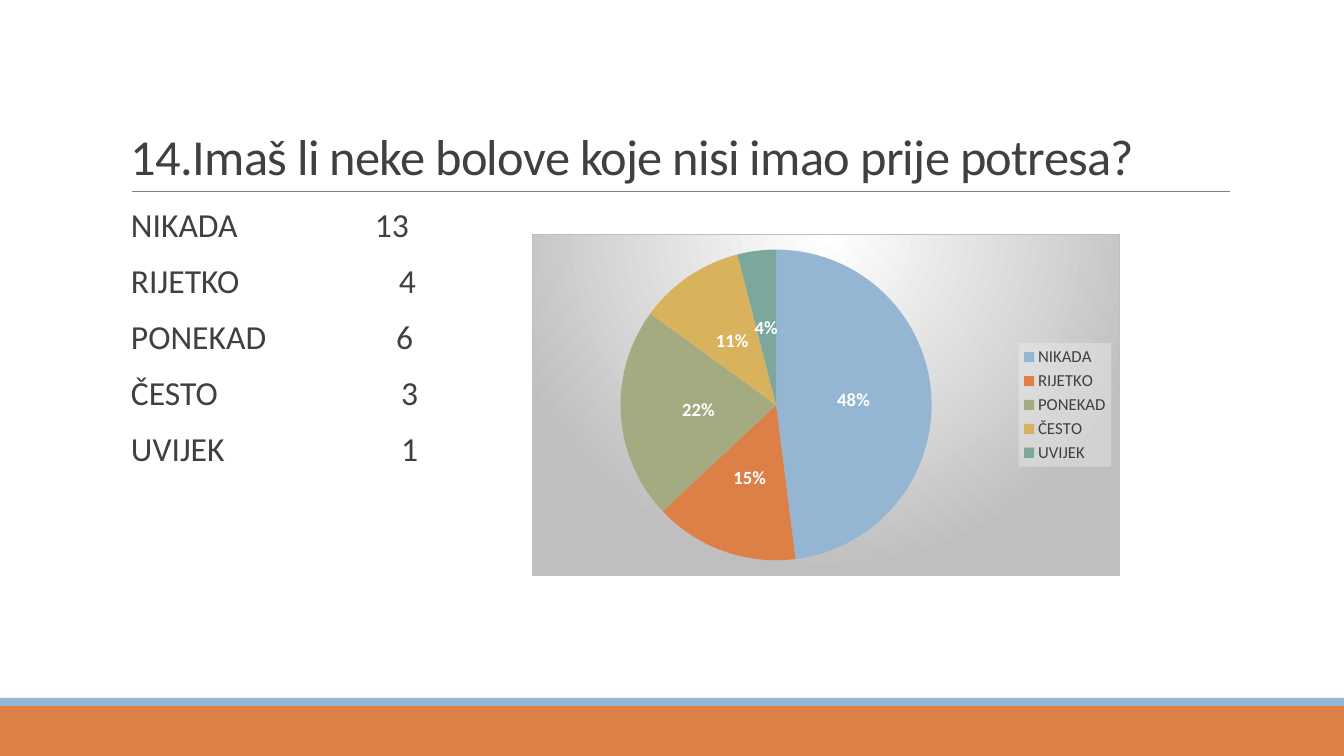
import pptx
import pptx.chart.data
import pptx.dml.color
import pptx.enum.chart
import pptx.enum.shapes
import pptx.enum.text
import pptx.oxml
import pptx.oxml.ns
import pptx.util

PX = 914400 / 100.8
FONT = "Calibri"
DARK = "404040"
BLUE = "94B6D2"
ORANGE = "DD8047"
GREY = "BFBFBF"
NAMESPACES = pptx.oxml.ns.nsdecls("a", "c")
qn = pptx.oxml.ns.qn

ANSWERS = [
    ("NIKADA", 13, 244, 48, BLUE),
    ("RIJETKO", 4, 268, 15, ORANGE),
    ("PONEKAD", 6, 265, 22, "A5AB81"),
    ("ČESTO", 3, 270, 11, "D8B25C"),
    ("UVIJEK", 1, 270, 4, "7BA79D"),
]


def px(*lengths):
    return [round(length * PX) for length in lengths]


def rgb(value):
    return pptx.dml.color.RGBColor.from_string(value)


def style_font(font, size, color, bold=False):
    font.name = FONT
    font.size = pptx.util.Pt(size)
    font.bold = bold
    font.color.rgb = rgb(color)


def add_band(slide, top, height, color):
    band = slide.shapes.add_shape(
        pptx.enum.shapes.MSO_SHAPE.RECTANGLE, *px(0, top, 1344, height))
    band.shadow.inherit = False
    band.fill.solid()
    band.fill.fore_color.rgb = rgb(color)
    band.line.fill.background()


def add_rule(slide, left, right, y):
    rule = slide.shapes.add_connector(
        pptx.enum.shapes.MSO_CONNECTOR.STRAIGHT, *px(left, y, right, y))
    rule.line.color.rgb = rgb("808080")
    rule.line.width = pptx.util.Pt(0.5)
    rule._element.spPr.append(pptx.oxml.parse_xml(f"<a:effectLst {NAMESPACES}/>"))


def add_text_frame(slide, left, top, width, height):
    frame = slide.shapes.add_textbox(*px(left, top, width, height)).text_frame
    frame.word_wrap = True
    return frame


def add_title(slide, text):
    frame = add_text_frame(slide, 121, 31, 1109, 160)
    frame.vertical_anchor = pptx.enum.text.MSO_ANCHOR.BOTTOM
    frame.text = text
    heading = frame.paragraphs[0]
    heading.line_spacing = 0.85
    style_font(heading.runs[0].font, 36, DARK)
    heading.runs[0].font._element.set("spc", "-50")


def add_answer_counts(slide):
    frame = add_text_frame(slide, 131, 204, 1099, 443)
    frame.margin_left = frame.margin_right = 0
    frame.text = "\n".join(f"{answer}\t{count}" for answer, count, *_ in ANSWERS)
    for paragraph, (_, _, count_left, _, _) in zip(frame.paragraphs, ANSWERS):
        paragraph.line_spacing = 0.9
        paragraph.space_before = pptx.util.Pt(12)
        paragraph.space_after = pptx.util.Pt(2)
        position = px(count_left)[0]
        paragraph._p.get_or_add_pPr().append(pptx.oxml.parse_xml(
            f'<a:tabLst {NAMESPACES}><a:tab pos="{position}" algn="l"/></a:tabLst>'))
        for run in paragraph.runs:
            style_font(run.font, 24, DARK)


def fill_chart_background(chart):
    chart._chartSpace.find(qn("c:chart")).addnext(pptx.oxml.parse_xml(
        f'<c:spPr {NAMESPACES}><a:gradFill><a:gsLst>'
        f'<a:gs pos="0"><a:srgbClr val="FFFFFF"/></a:gs>'
        f'<a:gs pos="100000"><a:srgbClr val="{GREY}"/></a:gs></a:gsLst>'
        f'<a:path path="circle"><a:fillToRect l="50000" r="50000" b="100000"/></a:path>'
        f'</a:gradFill><a:ln w="9525"><a:solidFill><a:srgbClr val="{GREY}"/>'
        f'</a:solidFill></a:ln></c:spPr>'))


def place_pie(chart):
    plot_area = chart._chartSpace.find(qn("c:chart")).find(qn("c:plotArea"))
    for layout in plot_area.findall(qn("c:layout")):
        plot_area.remove(layout)
    fractions = "".join(
        f'<c:{key} val="{value}"/>'
        for key, value in (("x", 0.15), ("y", 0.04), ("w", 0.53), ("h", 0.92)))
    plot_area.insert(0, pptx.oxml.parse_xml(
        f'<c:layout {NAMESPACES}><c:manualLayout><c:layoutTarget val="inner"/>'
        f'<c:xMode val="edge"/><c:yMode val="edge"/>{fractions}'
        f'</c:manualLayout></c:layout>'))


def style_legend(chart):
    chart.has_legend = True
    legend = chart.legend
    legend.position = pptx.enum.chart.XL_LEGEND_POSITION.RIGHT
    legend.include_in_layout = False
    style_font(legend.font, 12, DARK)
    legend._element.find(qn("c:txPr")).addprevious(pptx.oxml.parse_xml(
        f'<c:spPr {NAMESPACES}><a:solidFill><a:srgbClr val="F2F2F2">'
        f'<a:alpha val="39000"/></a:srgbClr></a:solidFill></c:spPr>'))


def add_answer_pie(slide):
    shares = pptx.chart.data.CategoryChartData()
    shares.categories = [answer for answer, *_ in ANSWERS]
    shares.add_series("Series 1", [share for _, _, _, share, _ in ANSWERS])
    chart = slide.shapes.add_chart(
        pptx.enum.chart.XL_CHART_TYPE.PIE, *px(532, 234, 588, 342), shares).chart
    chart.has_title = False
    style_font(chart.font, 10, "000000")
    fill_chart_background(chart)
    place_pie(chart)
    style_legend(chart)

    pie = chart.plots[0]
    pie.vary_by_categories = True
    for index, (*_, color) in enumerate(ANSWERS):
        slice_format = pie.series[0].points[index].format
        slice_format.fill.solid()
        slice_format.fill.fore_color.rgb = rgb(color)
        slice_format.line.fill.background()
    labels = pie.series[0].data_labels
    labels.show_value = False
    labels.show_percentage = True
    labels.number_format = "0%"
    labels.number_format_is_linked = False
    labels.position = pptx.enum.chart.XL_LABEL_POSITION.CENTER
    style_font(labels.font, 13.3, "FFFFFF", bold=True)


def main():
    deck = pptx.Presentation()
    deck.slide_width, deck.slide_height = px(1344, 756)
    slide = deck.slides.add_slide(deck.slide_layouts[6])
    add_band(slide, 706, 50, ORANGE)
    add_band(slide, 698, 8, BLUE)
    add_rule(slide, 132, 1230, 191)
    add_title(slide, "14.Imaš li neke bolove koje nisi imao prije potresa?")
    add_answer_counts(slide)
    add_answer_pie(slide)
    deck.save("out.pptx")


if __name__ == "__main__":
    main()
